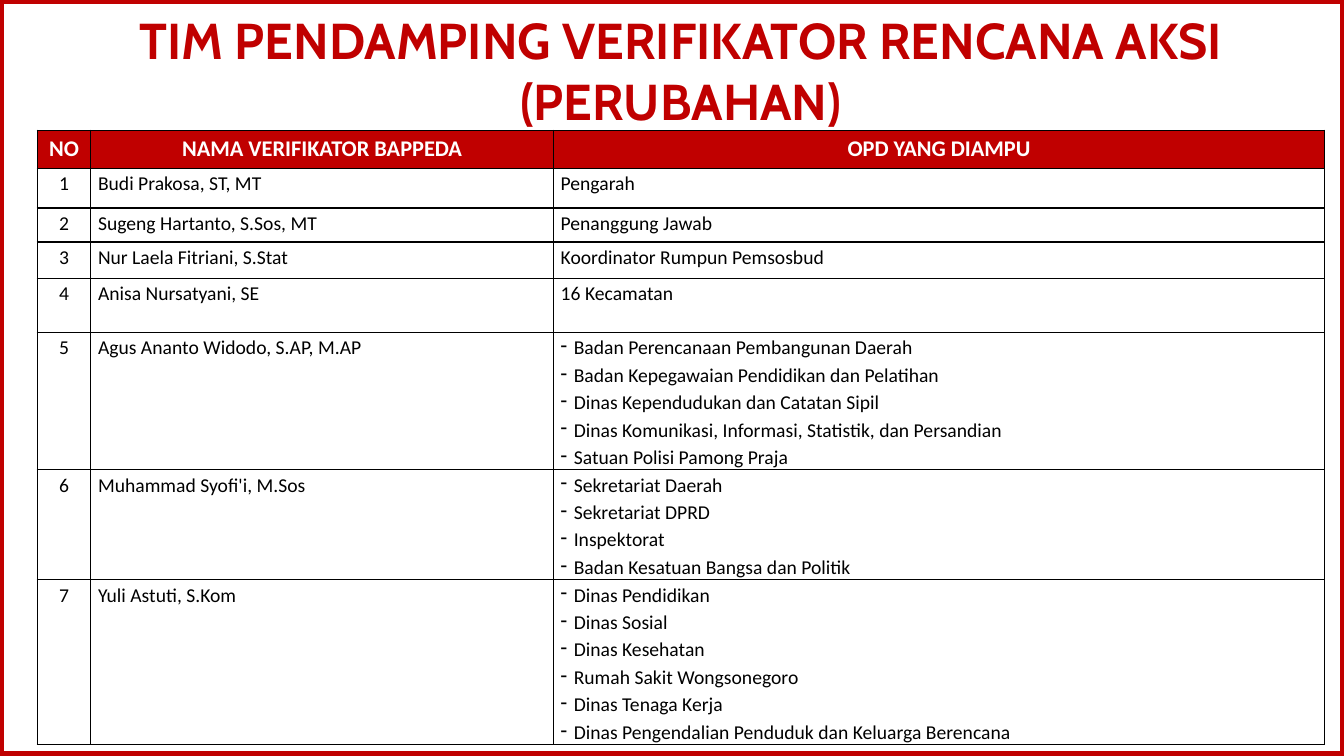
from copy import deepcopy

from lxml.etree import SubElement
from pptx import Presentation
from pptx.dml.color import RGBColor
from pptx.enum.shapes import MSO_SHAPE as Shape
from pptx.enum.text import MSO_ANCHOR as Anchor, MSO_AUTO_SIZE as AutoSize, PP_ALIGN as Align
from pptx.oxml.ns import qn
from pptx.util import Cm, Pt

RED, WHITE, BLACK = "C00000", "FFFFFF", "000000"
TITLE_FORMAT = {"name": "Cabin", "size": Pt(36), "bold": True}
HEADER_FORMAT = {"name": "Calibri", "size": Pt(16), "bold": True}
BODY_FORMAT = {"name": "Calibri", "size": Pt(14), "bold": False}
TITLE_BOX = {"left": Cm(1.8), "top": Cm(0), "width": Cm(30.71), "height": Cm(3.53)}
TITLE_FRAME = {"margin_left": Cm(0.3), "margin_right": Cm(0.3), "margin_top": Cm(0.15),
               "margin_bottom": Cm(0.15), "vertical_anchor": Anchor.MIDDLE,
               "word_wrap": True, "auto_size": AutoSize.NONE}
BODY_CELL = {"margin_left": Cm(0.18), "margin_right": Cm(0.18),
             "margin_top": 0, "margin_bottom": 0}

TITLE_LINES = ["TIM PENDAMPING VERIFIKATOR RENCANA AKSI", "(PERUBAHAN)"]
HEADERS = ["NO", "NAMA VERIFIKATOR BAPPEDA", "OPD YANG DIAMPU"]
COLUMN_WIDTHS = [1.35, 11.66, 19.43]
HEADER_HEIGHT = 0.97
VERIFIERS = [
    (0.99, "Budi Prakosa, ST, MT", "Pengarah"),
    (0.86, "Sugeng Hartanto, S.Sos, MT", "Penanggung Jawab"),
    (0.92, "Nur Laela Fitriani, S.Stat", "Koordinator Rumpun Pemsosbud"),
    (1.36, "Anisa Nursatyani, SE", "16 Kecamatan"),
    (3.46, "Agus Ananto Widodo, S.AP, M.AP", [
        "Badan Perencanaan Pembangunan Daerah",
        "Badan Kepegawaian Pendidikan dan Pelatihan",
        "Dinas Kependudukan dan Catatan Sipil",
        "Dinas Komunikasi, Informasi, Statistik, dan Persandian",
        "Satuan Polisi Pamong Praja"]),
    (2.77, "Muhammad Syofi'i, M.Sos", [
        "Sekretariat Daerah",
        "Sekretariat DPRD",
        "Inspektorat",
        "Badan Kesatuan Bangsa dan Politik"]),
    (4.16, "Yuli Astuti, S.Kom", [
        "Dinas Pendidikan",
        "Dinas Sosial",
        "Dinas Kesehatan",
        "Rumah Sakit Wongsonegoro",
        "Dinas Tenaga Kerja",
        "Dinas Pengendalian Penduduk dan Keluarga Berencana"]),
]


def rgb(hex_string):
    return RGBColor.from_string(hex_string)


def apply(target, values):
    for name, value in values.items():
        setattr(target, name, value)


def add_run(paragraph, text, text_format, color):
    run = paragraph.add_run()
    run.text = text
    apply(run.font, text_format)
    run.font.color.rgb = rgb(color)
    return run


def add_frame(slide, width, height):
    frame = slide.shapes.add_shape(Shape.RECTANGLE, 0, 0, width, height)
    frame.shadow.inherit = False
    frame.fill.background()
    frame.line.color.rgb = rgb(RED)
    frame.line.width = Pt(6)


def fill_title(title):
    apply(title, TITLE_BOX)
    apply(title.text_frame, TITLE_FRAME)
    paragraph = title.text_frame.paragraphs[0]
    paragraph.alignment = Align.CENTER
    first, second = TITLE_LINES
    run = add_run(paragraph, first, TITLE_FORMAT, RED)
    paragraph.add_line_break()
    paragraph._p.find(qn("a:br")).append(deepcopy(run._r.rPr))
    add_run(paragraph, second, TITLE_FORMAT, RED)


def add_borders(cell):
    properties = cell._tc.get_or_add_tcPr()
    for side in ("a:lnL", "a:lnR", "a:lnT", "a:lnB"):
        border = SubElement(properties, qn(side), w=str(Pt(1)))
        SubElement(SubElement(border, qn("a:solidFill")), qn("a:srgbClr"), val=BLACK)


def add_dash(paragraph):
    properties = paragraph._p.get_or_add_pPr()
    properties.set("marL", str(Cm(0.33)))
    properties.set("indent", str(Cm(-0.33)))
    SubElement(SubElement(properties, qn("a:buClr")), qn("a:srgbClr"), val=BLACK)
    SubElement(properties, qn("a:buChar"), char="-")


def fill_header_cell(cell, text):
    add_borders(cell)
    cell.fill.solid()
    cell.fill.fore_color.rgb = rgb(RED)
    paragraph = cell.text_frame.paragraphs[0]
    paragraph.alignment = Align.CENTER
    add_run(paragraph, text, HEADER_FORMAT, WHITE)


def fill_body_cell(cell, content, alignment):
    add_borders(cell)
    cell.fill.background()
    apply(cell, BODY_CELL)
    is_list = isinstance(content, list)
    for index, text in enumerate(content if is_list else [content]):
        text_frame = cell.text_frame
        paragraph = text_frame.add_paragraph() if index else text_frame.paragraphs[0]
        if is_list:
            add_dash(paragraph)
        apply(paragraph, {"alignment": alignment, "line_spacing": 1.15})
        add_run(paragraph, text, BODY_FORMAT, BLACK)


def add_verifier_table(slide):
    heights = [HEADER_HEIGHT] + [height for height, _, _ in VERIFIERS]
    table = slide.shapes.add_table(
        len(heights), len(HEADERS), Cm(0.94), Cm(3.28),
        Cm(sum(COLUMN_WIDTHS)), Cm(sum(heights))).table
    apply(table, {"first_row": False, "horz_banding": False})
    for column, width in zip(table.columns, COLUMN_WIDTHS):
        column.width = Cm(width)
    for row, height in zip(table.rows, heights):
        row.height = Cm(height)
    for column, header in enumerate(HEADERS):
        fill_header_cell(table.cell(0, column), header)
    for number, (_, verifier, offices) in enumerate(VERIFIERS, 1):
        fill_body_cell(table.cell(number, 0), str(number), Align.CENTER)
        fill_body_cell(table.cell(number, 1), verifier, Align.LEFT)
        fill_body_cell(table.cell(number, 2), offices, Align.LEFT)


def main():
    deck = Presentation()
    apply(deck, {"slide_width": Cm(33.87), "slide_height": Cm(19.05)})
    slide = deck.slides.add_slide(deck.slide_layouts[5])
    add_frame(slide, deck.slide_width, Cm(19.03))
    fill_title(slide.shapes.title)
    add_verifier_table(slide)
    deck.save("out.pptx")


if __name__ == "__main__":
    main()
